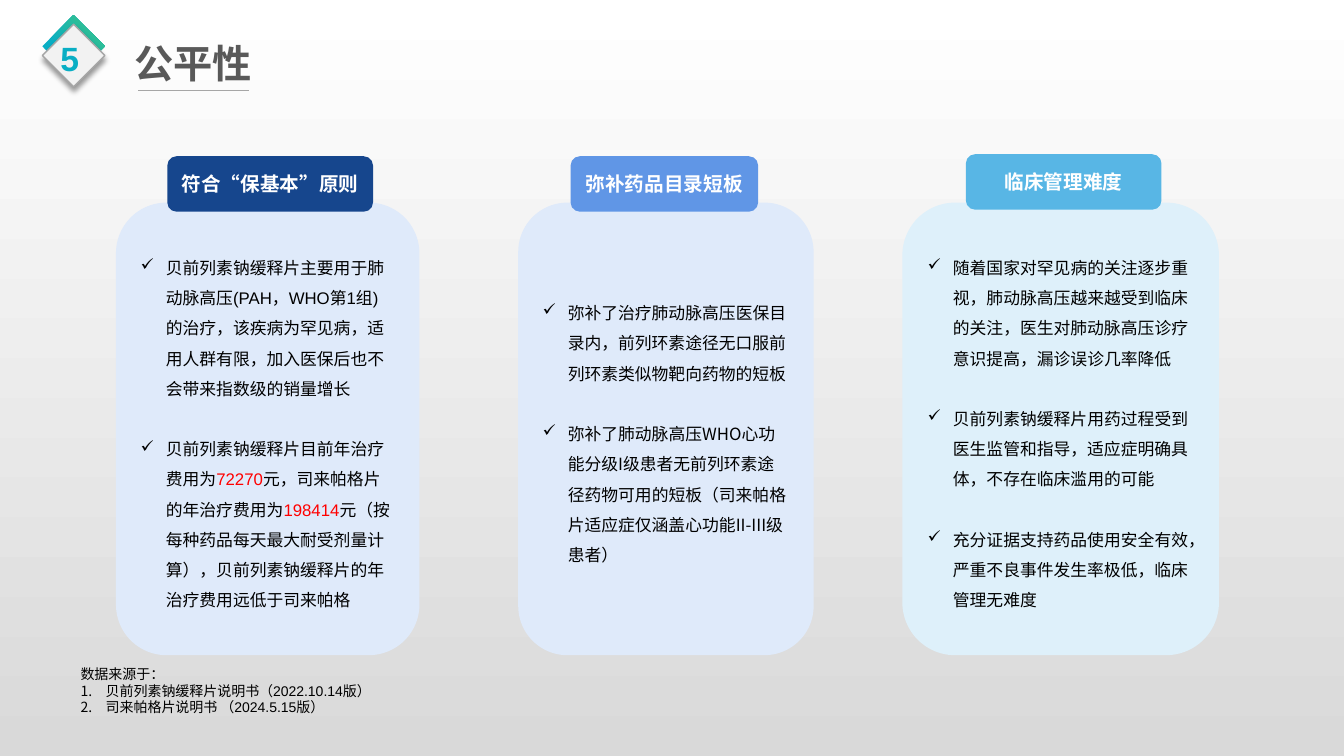
import pptx
import pptx.util
import pptx.dml.color
import pptx.enum.shapes
import pptx.enum.text
import pptx.oxml
import pptx.oxml.ns
from dataclasses import dataclass

SHAPES = pptx.enum.shapes.MSO_SHAPE
ALIGN = pptx.enum.text.PP_ALIGN
ANCHOR = pptx.enum.text.MSO_ANCHOR
Inches, Pt = pptx.util.Inches, pptx.util.Pt


@dataclass(frozen=True)
class Theme:
    latin: str = "Arial"
    chinese: str = "Noto Sans CJK SC"
    ink: str = "000000"
    title: str = "595959"
    accent: str = "09AEC4"
    accent_end: str = "45C87C"
    rule: str = "A6A6A6"
    badge: str = "F2F2F2"
    highlight: str = "FF0000"
    white: str = "FFFFFF"
    background_end: str = "D9D9D9"
    title_size: int = 28
    number_size: int = 24
    label_size: int = 14
    body_size: int = 12
    source_size: int = 10


THEME = Theme()

# Content: a paragraph is a list of (text, font) or (text, font, colour) runs
TITLE, NUMBER = "公平性", "5"
A, C, RED = THEME.latin, THEME.chinese, THEME.highlight
COLUMNS = [
    dict(card=(1.15, 3.01), label=(1.66, 1.55, 2.04), fill="DFEAFA", label_fill="16468D",
         heading=("符合“保基本”原则", C),
         points=[
             [("贝前列素钠缓释片主要⽤于肺动脉⾼压(PAH，WHO第1组)的治疗，该疾病为罕⻅病，"
               "适⽤⼈群有限，加⼊医保后也不会带来指数级的销量增⻓", A)],
             [("贝前列素钠缓释片⽬前年治疗费⽤为", A), ("72270", A, RED),
              ("元，司来帕格⽚的年治疗费⽤为", A), ("198414", A, RED),
              ("元（按每种药品每天最大耐受剂量计算），贝前列素钠缓释片的年治疗费⽤远低于司来帕格", A)],
         ]),
    dict(card=(5.14, 2.93), label=(5.66, 1.55, 1.86), fill="DFEAFA", label_fill="6096E6",
         heading=("弥补药品目录短板", C),
         points=[
             [("弥补了治疗肺动脉高压医保目录内，前列环素途径无口服前列环素类似物靶向药物的短板", A)],
             [("弥补了肺动脉高压WHO心功能分级I级患者无前列环素途径药物可用的短板"
               "（司来帕格片适应症仅涵盖心功能II-III级患者）", C)],
         ]),
    dict(card=(8.95, 3.14), label=(9.58, 1.53, 1.94), fill="DEF0FA", label_fill="58B6E5",
         heading=("临床管理难度", A),
         points=[
             [("随着国家对罕见病的关注逐步重视，肺动脉高压越来越受到临床的关注，"
               "医生对肺动脉高压诊疗意识提高，漏诊误诊几率降低", C)],
             [("贝前列素钠缓释片用药过程受到医生监管和指导，适应症明确具体，不存在临床滥用的可能", C)],
             [("充分证据支持药品使用安全有效，严重不良事件发生率极低，临床管理无难度", C)],
         ]),
]
SOURCE_HEADING = "数据来源于："
SOURCES = ["贝前列素钠缓释片说明书（2022.10.14版）", "司来帕格片说明书 （2024.5.15版）"]

# Shared rows, in inches
CARD_TOP, CARD_HEIGHT, LABEL_HEIGHT = 2.01, 4.49, 0.55
BADGE_LEFT, BADGE_SIZE, INDENT = 0.42, 0.62, 0.25


def rgb(value):
    return pptx.dml.color.RGBColor.from_string(value)


def xml(parent, markup):
    namespace = pptx.oxml.ns.nsdecls("a")
    parent.append(pptx.oxml.parse_xml(markup.replace("/>", f" {namespace}/>", 1)
                                      if markup.endswith("/>") and markup.count("<") == 1
                                      else markup.replace(">", f" {namespace}>", 1)))


def paint_gradient(fill, stops, angle):
    fill.gradient()
    fill.gradient_angle = angle
    for stop, (position, color) in zip(fill.gradient_stops, stops):
        stop.position, stop.color.rgb = position, rgb(color)


def write(paragraph, runs, size, color=THEME.ink, bold=False):
    for text, font, *special in runs:
        run = paragraph.add_run()
        run.text = text
        run.font.size, run.font.bold = Pt(size), bold
        run.font.color.rgb = rgb(special[0] if special else color)
        run.font.name = font
        xml(run.font._element, f'<a:ea typeface="{THEME.chinese}"/>')


def add_bullet(paragraph, markup):
    properties = paragraph._p.get_or_add_pPr()
    properties.set("marL", str(Inches(INDENT)))
    properties.set("indent", str(-Inches(INDENT)))
    xml(properties, markup)


def add_block(shapes, kind, box, fill=None):
    shape = shapes.add_shape(kind, *map(Inches, box))
    shape.shadow.inherit = False
    shape.line.fill.background()
    if fill:
        shape.fill.solid()
        shape.fill.fore_color.rgb = rgb(fill)
    shape.text_frame.word_wrap = True
    shape.text_frame.vertical_anchor = ANCHOR.MIDDLE
    return shape


def add_column(slide, column):
    left, width = column["card"]
    card = add_block(slide.shapes, SHAPES.ROUNDED_RECTANGLE,
                     (left, CARD_TOP, width, CARD_HEIGHT), column["fill"])
    frame = card.text_frame
    for index, runs in enumerate(column["points"]):
        paragraph = frame.add_paragraph() if index else frame.paragraphs[0]
        paragraph.alignment = ALIGN.LEFT
        paragraph.line_spacing = 1.5
        paragraph.space_before = Pt(21.6 if index else 0)
        add_bullet(paragraph, '<a:buChar char="✓"/>')
        write(paragraph, runs, THEME.body_size)

    label = add_block(slide.shapes, SHAPES.ROUNDED_RECTANGLE,
                      (*column["label"], LABEL_HEIGHT), column["label_fill"])
    paragraph = label.text_frame.paragraphs[0]
    paragraph.alignment = ALIGN.CENTER
    write(paragraph, [column["heading"]], THEME.label_size, THEME.white, True)


def add_title(slide):
    title = slide.shapes.title
    title.left, title.top, title.width, title.height = map(Inches, (1.23, 0.34, 1.38, 0.57))
    frame = title.text_frame
    frame.word_wrap = False
    frame.auto_size = pptx.enum.text.MSO_AUTO_SIZE.NONE
    frame.vertical_anchor = ANCHOR.TOP
    frame.paragraphs[0].alignment = ALIGN.LEFT
    write(frame.paragraphs[0], [(TITLE, C)], THEME.title_size, THEME.title, True)

    rule = slide.shapes.add_connector(pptx.enum.shapes.MSO_CONNECTOR.STRAIGHT,
                                      *map(Inches, (1.37, 0.9, 2.47, 0.9)))
    rule.line.color.rgb, rule.line.width = rgb(THEME.rule), Pt(0.5)
    xml(rule._element.spPr, "<a:effectLst/>")


def add_badge(slide):
    shapes = slide.shapes.add_group_shape().shapes
    back, front = (add_block(shapes, SHAPES.FLOWCHART_DECISION,
                             (BADGE_LEFT, top, BADGE_SIZE, BADGE_SIZE), fill)
                   for top, fill in ((0.15, None), (0.24, THEME.badge)))
    paint_gradient(back.fill, [(0.35, THEME.accent), (1, THEME.accent_end)], 45)
    front.line.color.rgb, front.line.width = rgb(THEME.rule), Pt(1)
    effects = front._element.spPr.find(pptx.oxml.ns.qn("a:effectLst"))
    xml(effects, f'<a:outerShdw blurRad="{Pt(4)}" dist="{Pt(3)}" dir="5400000">'
                 '<a:srgbClr val="000000"><a:alpha val="40000"/></a:srgbClr></a:outerShdw>')
    number = shapes.add_textbox(*map(Inches, (0.5, 0.33, 0.39, 0.5)))
    number.text_frame.word_wrap = False
    write(number.text_frame.paragraphs[0], [(NUMBER, A)],
          THEME.number_size, THEME.accent, True)


def add_sources(slide):
    frame = slide.shapes.add_textbox(*map(Inches, (0.7, 6.55, 3.71, 0.61))).text_frame
    frame.word_wrap = True
    write(frame.paragraphs[0], [(SOURCE_HEADING, A)], THEME.source_size)
    for source in SOURCES:
        paragraph = frame.add_paragraph()
        add_bullet(paragraph, '<a:buAutoNum type="arabicPeriod"/>')
        write(paragraph, [(source, A)], THEME.source_size)


def main():
    presentation = pptx.Presentation()
    presentation.slide_width, presentation.slide_height = Inches(13.33), Inches(7.5)
    slide = presentation.slides.add_slide(presentation.slide_layouts[5])
    paint_gradient(slide.background.fill,
                   [(0, THEME.white), (1, THEME.background_end)], 270)
    add_sources(slide)
    for column in COLUMNS:
        add_column(slide, column)
    add_title(slide)
    add_badge(slide)
    presentation.save("out.pptx")


if __name__ == "__main__":
    main()
